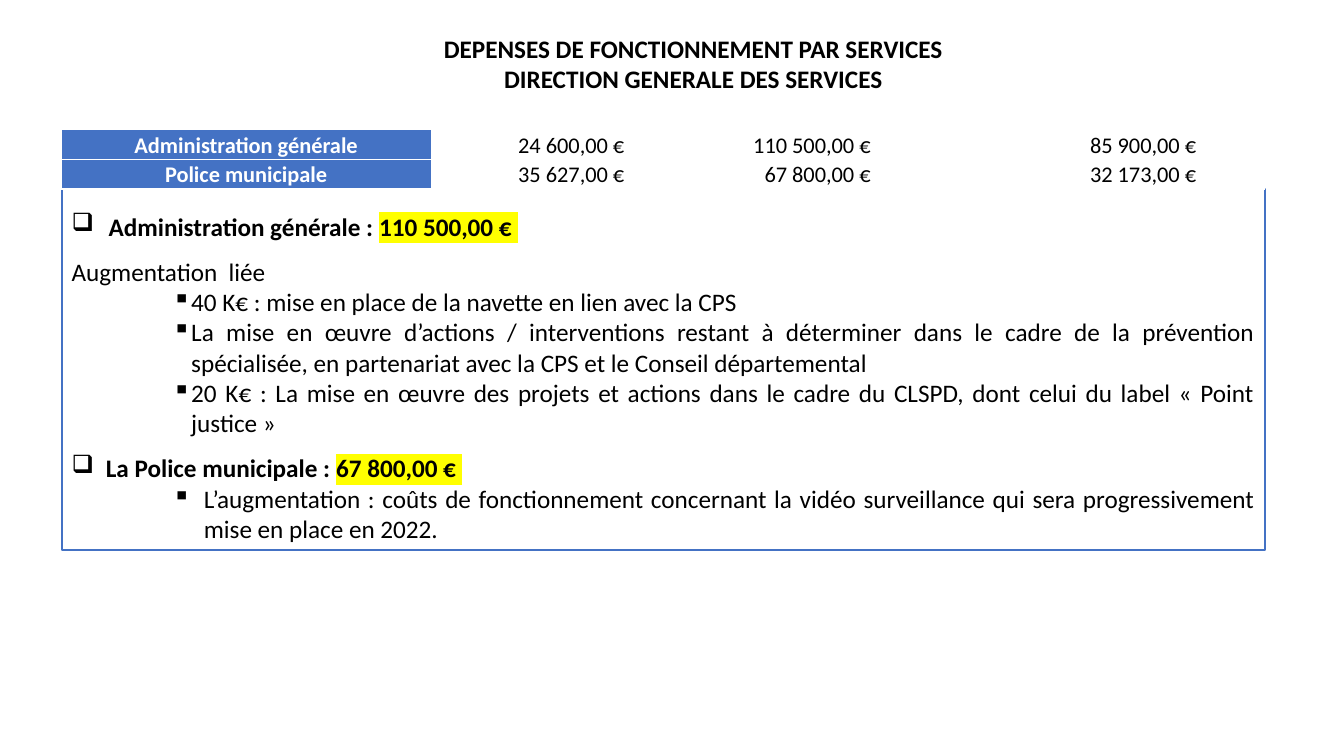
from pptx import Presentation
from pptx.dml.color import RGBColor as RGB
from pptx.enum.shapes import MSO_SHAPE as Shape
from pptx.enum.text import MSO_ANCHOR as Anchor, PP_ALIGN as Align
from pptx.oxml.ns import qn
from pptx.util import Pt
from lxml.etree import SubElement as Sub, Element

COLORS = {"text": "000000", "blue": "4472C4", "white": "FFFFFF", "mark": "FFFF00"}
FONT = "Calibri"

TITLE = ["DEPENSES DE FONCTIONNEMENT PAR SERVICES", "DIRECTION GENERALE DES SERVICES"]
COSTS = [
    ["Administration générale", "24 600,00 €", "110 500,00 €", "85 900,00 €"],
    ["Police municipale", "35 627,00 €", "67 800,00 €", "32 173,00 €"],
]
WIDTHS = [264, 173, 175, 247.5]
GAPS = [1, 35, 34, 49]

# Each note: bullet, left indent, hanging indent, line spacing, plain text, marked text
NOTES = [
    ("❑", 26.5, 26.5, 1.5, "Administration générale : ", "110 500,00 € "),
    ("", 0, 0, 1.5, "Augmentation  liée", ""),
    ("▪", 85.5, 13.5, 1, "40 K€ : mise en place de la navette en lien avec la CPS", ""),
    ("▪", 85.5, 13.5, 1, "La mise en œuvre d’actions / interventions restant à déterminer dans le "
     "cadre de la prévention spécialisée, en partenariat avec la CPS et le Conseil départemental", ""),
    ("▪", 85.5, 13.5, 1, "20 K€ : La mise en œuvre des projets et actions dans le cadre du CLSPD, "
     "dont celui du label « Point justice »", ""),
    ("❑", 24.5, 24.5, 1.5, "La Police municipale : ", "67 800,00 € "),
    ("▪", 94.5, 22.5, 1, "L’augmentation : coûts de fonctionnement concernant la vidéo surveillance "
     "qui sera progressivement mise en place en 2022.", ""),
]


def style(run, size, color="text", bold=False):
    font = run.font
    font.name, font.size, font.bold = FONT, Pt(size), bold
    font.color.rgb = RGB.from_string(COLORS[color])


def mark(run):
    """Highlight a run whose colour is already set."""
    light = Element(qn("a:highlight"))
    Sub(light, qn("a:srgbClr"), val=COLORS["mark"])
    run.font._element.find(qn("a:solidFill")).addnext(light)


def add_title(slide, left, top, width, height):
    title = slide.shapes.title
    title.left, title.top, title.width, title.height = map(Pt, (left, top, width, height))
    frame = title.text_frame
    frame.text = "\n".join(TITLE)
    frame.word_wrap = True
    frame.vertical_anchor = Anchor.TOP
    for par in frame.paragraphs:
        par.alignment = Align.CENTER
        par.line_spacing = 1.0
        par.space_before = Pt(0)
        style(par.runs[0], 18, bold=True)


def add_note(par, bullet, left, hang, space, plain, marked):
    par.alignment = Align.JUSTIFY
    par.line_spacing = float(space)
    props = par._p.get_or_add_pPr()
    props.set("marL", str(Pt(left)))
    props.set("indent", str(-Pt(hang)))
    if bullet:
        Sub(props, qn("a:buChar"), char=bullet)
    par.add_run().text = plain
    style(par.runs[0], 18, bold=bool(marked))
    if marked:
        run = par.add_run()
        run.text = marked
        style(run, 18, bold=True)
        mark(run)


def add_notes(slide, left, top, width, height):
    box = slide.shapes.add_shape(Shape.RECTANGLE, *map(Pt, (left, top, width, height)))
    box.shadow.inherit = False
    box.fill.background()
    box.line.color.rgb = RGB.from_string(COLORS["blue"])
    box.line.width = Pt(1.5)
    frame = box.text_frame
    frame.word_wrap = True
    frame.vertical_anchor = Anchor.MIDDLE
    for i, note in enumerate(NOTES):
        par = frame.add_paragraph() if i else frame.paragraphs[0]
        add_note(par, *note)


def add_edges(cell):
    props = cell._tc.get_or_add_tcPr()
    for i, side in enumerate(("lnL", "lnR", "lnT", "lnB")):
        edge = Element(qn("a:" + side), w=str(Pt(1)))
        Sub(Sub(edge, qn("a:solidFill")), qn("a:srgbClr"), val=COLORS["white"])
        props.insert(i, edge)


def add_costs(slide, left, top, width, height):
    size = len(COSTS), len(WIDTHS)
    table = slide.shapes.add_table(*size, *map(Pt, (left, top, width, height))).table
    for col, wide in zip(table.columns, WIDTHS):
        col.width = Pt(wide)
    for r, row in enumerate(COSTS):
        table.rows[r].height = Pt(height / len(COSTS))
        for c, text in enumerate(row):
            cell = table.cell(r, c)
            cell.text = text
            cell.vertical_anchor = Anchor.BOTTOM
            cell.margin_left = cell.margin_top = Pt(0.75)
            cell.margin_right, cell.margin_bottom = Pt(GAPS[c]), Pt(0)
            cell.fill.solid()
            cell.fill.fore_color.rgb = RGB.from_string(COLORS["white" if c else "blue"])
            add_edges(cell)
            par = cell.text_frame.paragraphs[0]
            par.alignment = Align.RIGHT if c else Align.CENTER
            style(par.runs[0], 16, "text" if c else "white", bold=not c)


def main():
    deck = Presentation()
    deck.slide_width, deck.slide_height = Pt(960), Pt(540)
    slide = deck.slides.add_slide(deck.slide_layouts[5])
    add_title(slide, 217, 20, 556.5, 51)
    add_notes(slide, 44, 135, 859.5, 258)
    add_costs(slide, 44, 92.5, sum(WIDTHS), 42.5)
    deck.save("out.pptx")


if __name__ == "__main__":
    main()
